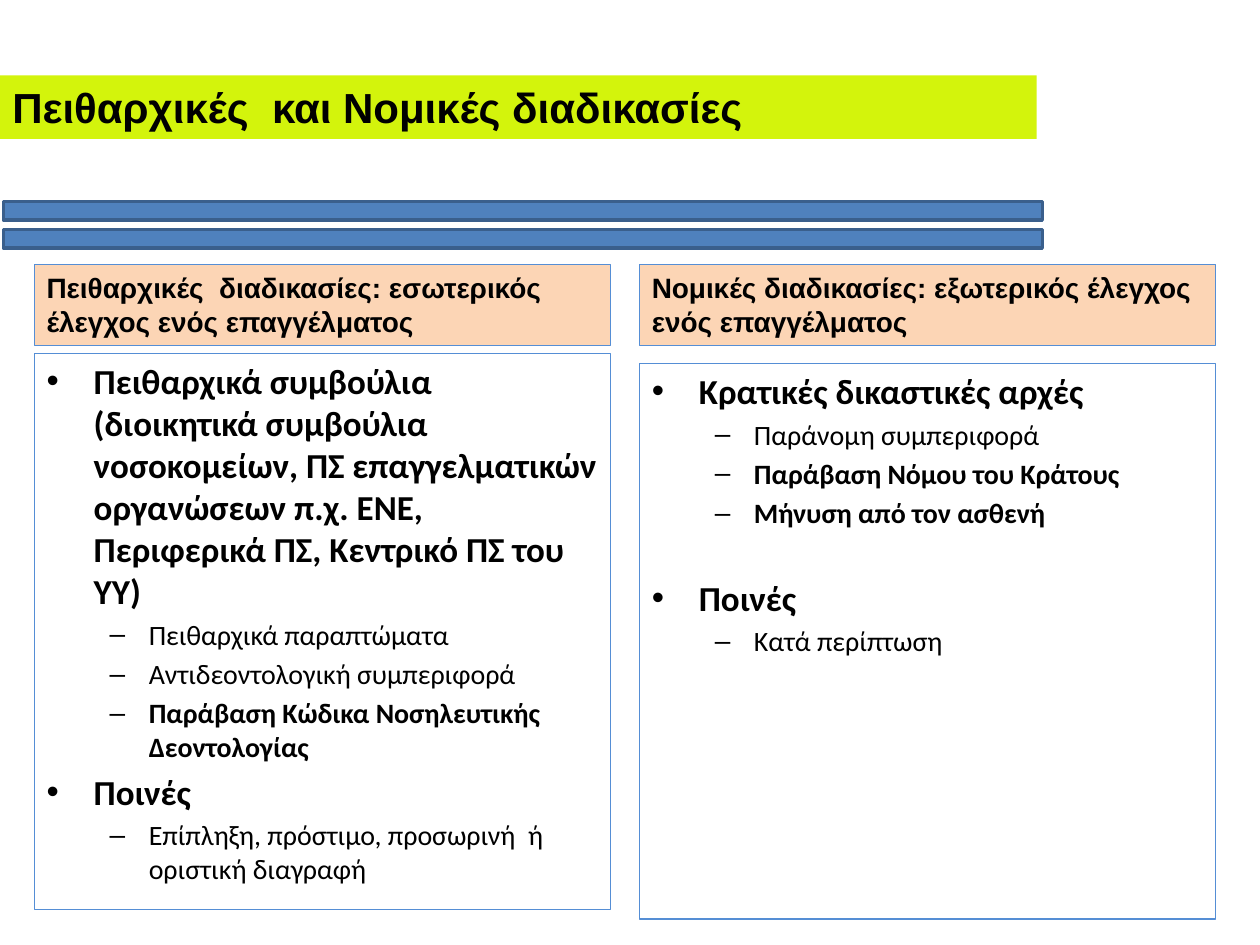
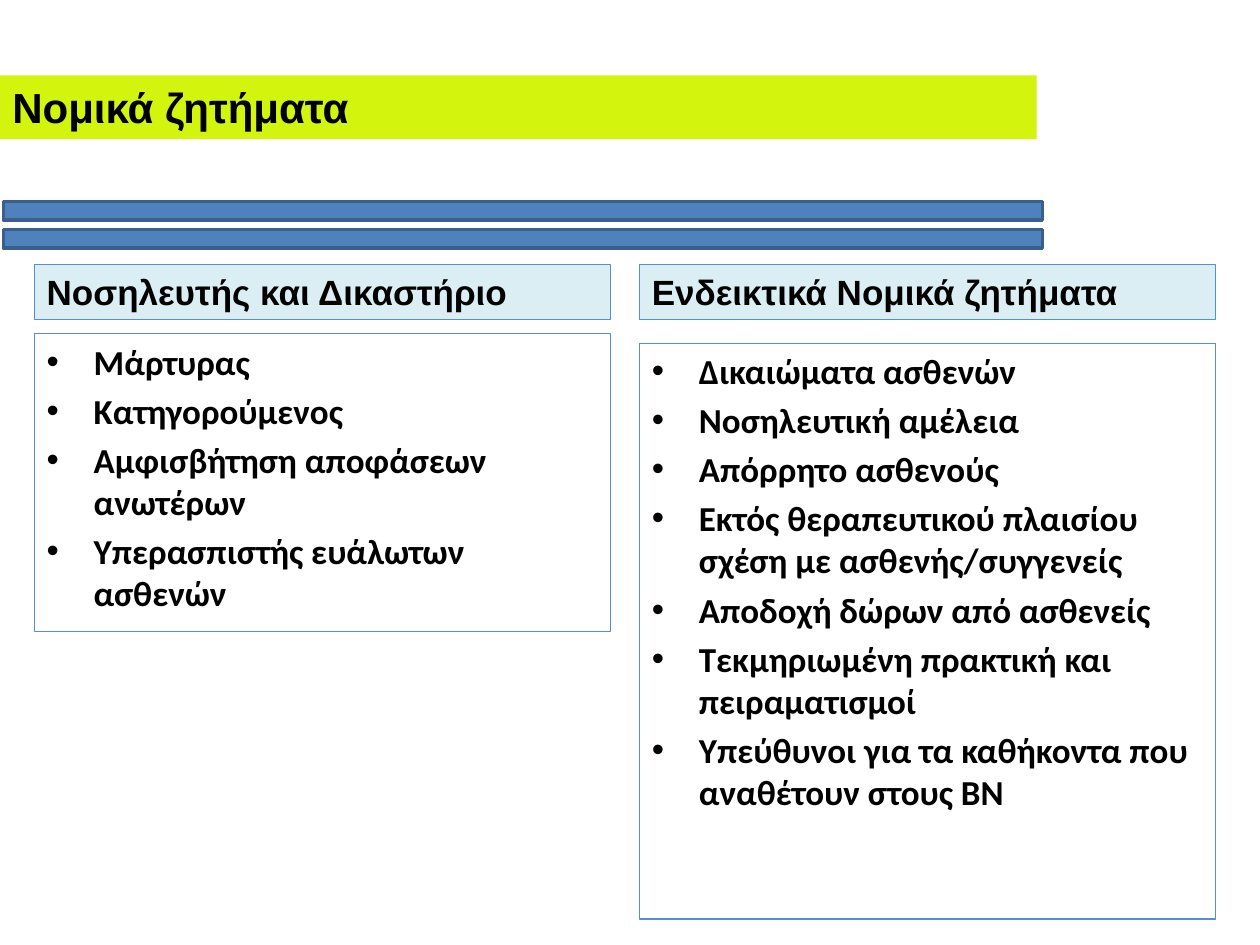
from dataclasses import dataclass

from lxml.etree import SubElement
from pptx import Presentation
from pptx.dml.color import RGBColor
from pptx.enum.shapes import MSO_SHAPE
from pptx.enum.text import MSO_AUTO_SIZE
from pptx.oxml.ns import qn
from pptx.util import Cm, Pt


@dataclass(frozen=True)
class Theme:
    title_fill: str = "D3F40C"
    stripe_fill: str = "4F81BD"
    stripe_line: str = "3A5F8C"
    frame_line: str = "558ED5"
    peach: str = "FCD5B5"
    ice: str = "DBEEF4"
    ink: str = "000000"
    heading_font: str = "Arial"
    body_font: str = "Calibri"
    title_size: int = 24
    large: int = 20
    small: int = 16


THEME = Theme()

# Each list item is (level, bold, text); SECTION_GAP opens space before the next one.
SECTION_GAP = "gap"
PAGES = [
    {
        "title": "Πειθαρχικές  και Νομικές διαδικασίες",
        "heading_fill": THEME.peach,
        "heading_size": THEME.small,
        "heading_height": 1.63,
        "columns": [
            {
                "heading": "Πειθαρχικές  διαδικασίες: εσωτερικός έλεγχος ενός επαγγέλματος",
                "top": 7.13,
                "height": 11.2,
                "items": [
                    (0, True, "Πειθαρχικά συμβούλια (διοικητικά συμβούλια νοσοκομείων, "
                              "ΠΣ επαγγελματικών οργανώσεων π.χ. ΕΝΕ, Περιφερικά ΠΣ, "
                              "Κεντρικό ΠΣ του ΥΥ)"),
                    (1, False, "Πειθαρχικά παραπτώματα"),
                    (1, False, "Αντιδεοντολογική συμπεριφορά"),
                    (1, True, "Παράβαση Κώδικα Νοσηλευτικής Δεοντολογίας"),
                    (0, True, "Ποινές"),
                    (1, False, "Επίπληξη, πρόστιμο, προσωρινή  ή οριστική διαγραφή"),
                ],
            },
            {
                "heading": "Νομικές διαδικασίες: εξωτερικός έλεγχος ενός επαγγέλματος",
                "top": 7.33,
                "height": 11.2,
                "items": [
                    (0, True, "Κρατικές δικαστικές αρχές"),
                    (1, False, "Παράνομη συμπεριφορά"),
                    (1, True, "Παράβαση Νόμου του Κράτους"),
                    (1, True, "Μήνυση από τον ασθενή"),
                    SECTION_GAP,
                    (0, True, "Ποινές"),
                    (1, False, "Κατά περίπτωση"),
                ],
            },
        ],
    },
    {
        "title": "Νομικά ζητήματα",
        "heading_fill": THEME.ice,
        "heading_size": THEME.large,
        "heading_height": 1.11,
        "columns": [
            {
                "heading": "Νοσηλευτής και Δικαστήριο",
                "top": 6.73,
                "height": 6.0,
                "items": [
                    (0, True, "Μάρτυρας"),
                    (0, True, "Κατηγορούμενος"),
                    (0, True, "Αμφισβήτηση αποφάσεων ανωτέρων"),
                    (0, True, "Υπερασπιστής ευάλωτων ασθενών"),
                ],
            },
            {
                "heading": "Ενδεικτικά Νομικά ζητήματα",
                "top": 6.93,
                "height": 11.6,
                "items": [
                    (0, True, "Δικαιώματα ασθενών"),
                    (0, True, "Νοσηλευτική αμέλεια"),
                    (0, True, "Απόρρητο ασθενούς"),
                    (0, True, "Εκτός θεραπευτικού πλαισίου σχέση με ασθενής/συγγενείς"),
                    (0, True, "Αποδοχή δώρων από ασθενείς"),
                    (0, True, "Τεκμηριωμένη πρακτική και πειραματισμοί"),
                    (0, True, "Υπεύθυνοι για τα καθήκοντα που αναθέτουν στους ΒΝ"),
                ],
            },
        ],
    },
]

COLUMN_LEFT, COLUMN_WIDTH, COLUMN_STEP = 0.69, 11.62, 12.2
HEADING_TOP = 5.33
# Per level: text size, bullet sign, left margin and hanging indent in cm
LEVELS = [
    (THEME.large, "•", 0.95, 0.95),
    (THEME.small, "–", 2.06, 0.79),
]
SPACE_BEFORE = 0.2
GAP_POINTS = 22.7


def add_span(para, text, font, size, bold):
    span = para.add_run()
    span.text = text
    span.font.name = font
    span.font.size = Pt(size)
    span.font.bold = bold
    span.font.color.rgb = RGBColor.from_string(THEME.ink)


def add_box(page, left, top, width, height, fill=None, line=None):
    box = page.shapes.add_textbox(Cm(left), Cm(top), Cm(width), Cm(height))
    box.text_frame.word_wrap = True
    if fill:
        box.fill.solid()
        box.fill.fore_color.rgb = RGBColor.from_string(fill)
    if line:
        box.line.color.rgb = RGBColor.from_string(line)
        box.line.width = Pt(0.75)
    return box


def add_heading(page, text, size, *frame, **colours):
    """Add a filled box that holds one bold line of heading text."""
    box = add_box(page, *frame, **colours)
    box.text_frame.auto_size = MSO_AUTO_SIZE.SHAPE_TO_FIT_TEXT
    add_span(box.text_frame.paragraphs[0], text, THEME.heading_font, size, True)


def add_stripes(page):
    stripes = page.shapes.add_shape(
        MSO_SHAPE.MATH_EQUAL, Cm(-3.71), Cm(3.73), Cm(28.5), Cm(1.6))
    stripes.shadow.inherit = False
    stripes.fill.solid()
    stripes.fill.fore_color.rgb = RGBColor.from_string(THEME.stripe_fill)
    stripes.line.color.rgb = RGBColor.from_string(THEME.stripe_line)
    stripes.line.width = Pt(2)


def set_bullet(para, sign, margin, hanging):
    properties = para._p.get_or_add_pPr()
    properties.set("marL", str(Cm(margin)))
    properties.set("indent", str(-Cm(hanging)))
    SubElement(properties, qn("a:buFont"), typeface=THEME.heading_font)
    SubElement(properties, qn("a:buChar"), char=sign)


def fill_list(frame, items):
    para = frame.paragraphs[0]
    gap = 0
    started = False
    for item in items:
        if item == SECTION_GAP:
            gap = GAP_POINTS
            continue
        level, bold, text = item
        size, sign, margin, hanging = LEVELS[level]
        if started:
            para = frame.add_paragraph()
        para.level = level
        para.space_before = Pt(size * SPACE_BEFORE + gap)
        set_bullet(para, sign, margin, hanging)
        add_span(para, text, THEME.body_font, size, bold)
        gap, started = 0, True


def build_page(deck, content):
    page = deck.slides.add_slide(deck.slide_layouts[6])
    add_stripes(page)
    add_heading(page, content["title"], THEME.title_size,
                0, 1.52, 20.9, 1.28, fill=THEME.title_fill)
    for index, column in enumerate(content["columns"]):
        left = COLUMN_LEFT + index * COLUMN_STEP
        add_heading(page, column["heading"], content["heading_size"],
                    left, HEADING_TOP, COLUMN_WIDTH, content["heading_height"],
                    fill=content["heading_fill"], line=THEME.frame_line)
        box = add_box(page, left, column["top"], COLUMN_WIDTH, column["height"],
                      line=THEME.frame_line)
        fill_list(box.text_frame, column["items"])


def main():
    deck = Presentation()
    deck.slide_width, deck.slide_height = Cm(25.4), Cm(19.05)
    for content in PAGES:
        build_page(deck, content)
    deck.save("out.pptx")


if __name__ == "__main__":
    main()
